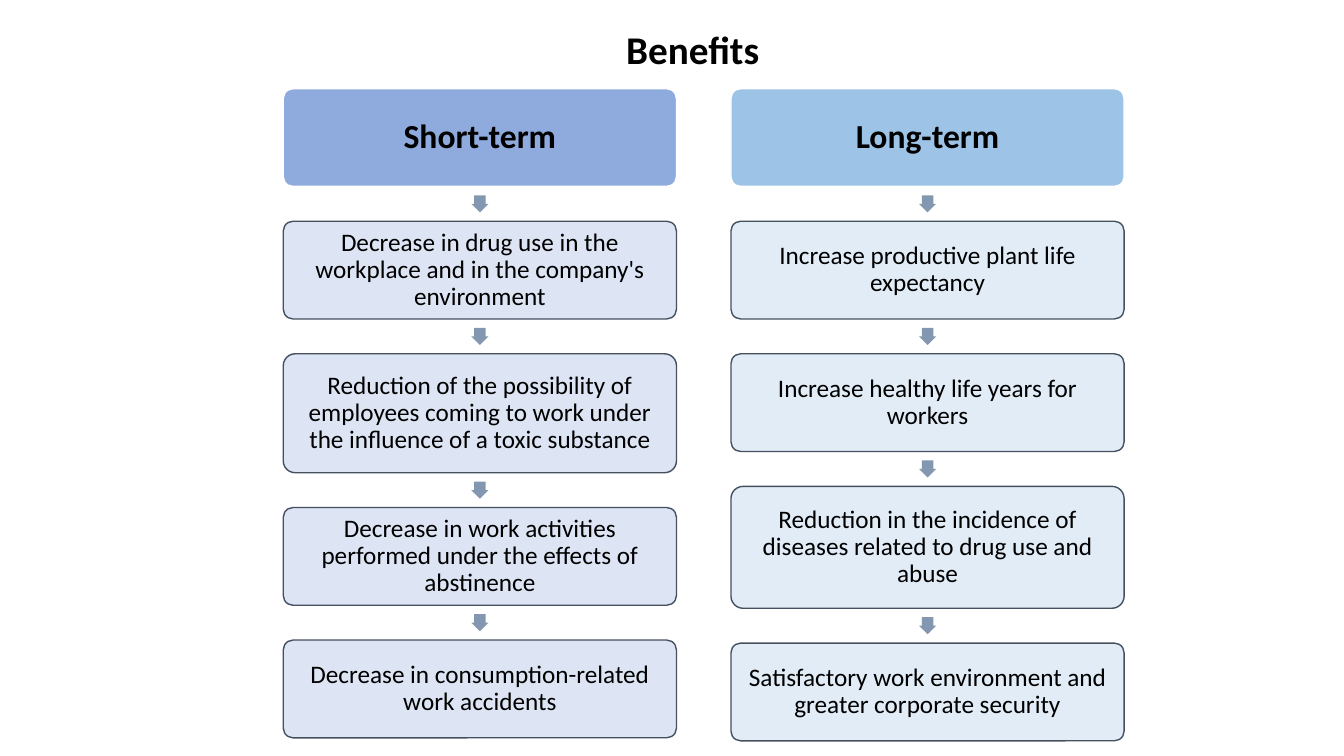
import pptx
import pptx.dml.color
import pptx.enum.shapes
import pptx.enum.text
import pptx.oxml
import pptx.oxml.ns
import pptx.util

Inches = pptx.util.Inches
Pt = pptx.util.Pt
PRESET = pptx.enum.shapes.MSO_SHAPE

BOX_WIDTH, BOX_HEIGHT = 3.9, 0.97
GAP = 0.345
ARROW_SIZE = 0.17
TOP = 0.88
LEFT, COLUMN_STEP = 2.81, 4.44
INSET = 0.03

# heading, heading fill, item fill, items as (text, height)
COLUMNS = [
    ("Short-term", "8FAADC", "DAE3F3", [
        ("Decrease in drug use in the workplace and in the company's environment", BOX_HEIGHT),
        ("Reduction of the possibility of employees coming to work under "
         "the influence of a toxic substance", 1.18),
        ("Decrease in work activities performed under the effects of abstinence", BOX_HEIGHT),
        ("Decrease in consumption-related work accidents", BOX_HEIGHT),
    ]),
    ("Long-term", "9DC3E6", "DEEBF7", [
        ("Increase productive plant life expectancy", BOX_HEIGHT),
        ("Increase healthy life years for workers", BOX_HEIGHT),
        ("Reduction in the incidence of diseases related to drug use and abuse", 1.21),
        ("Satisfactory work environment and greater corporate security", BOX_HEIGHT),
    ]),
]


def color(hex_string):
    return pptx.dml.color.RGBColor.from_string(hex_string)


def write(shape, text, size=18, bold=False, inset=INSET):
    frame = shape.text_frame
    frame.word_wrap = True
    frame.auto_size = pptx.enum.text.MSO_AUTO_SIZE.NONE
    frame.vertical_anchor = pptx.enum.text.MSO_ANCHOR.MIDDLE
    frame.margin_left = frame.margin_right = Inches(inset)
    frame.margin_top = frame.margin_bottom = Inches(inset)
    paragraph = frame.paragraphs[0]
    paragraph.alignment = pptx.enum.text.PP_ALIGN.CENTER
    paragraph.line_spacing = 0.9
    run = paragraph.add_run()
    run.text = text
    run.font.name = "Calibri"
    run.font.size = Pt(size)
    run.font.bold = bold
    run.font.color.rgb = color("000000")


def set_opacity(fill_format, percent):
    for rgb in fill_format._xPr.iter(pptx.oxml.ns.qn("a:srgbClr")):
        alpha = rgb.makeelement(pptx.oxml.ns.qn("a:alpha"), {"val": str(percent * 1000)})
        rgb.append(alpha)


def add_preset(slide, preset, left, top, width, height, fill):
    shape = slide.shapes.add_shape(
        preset, Inches(left), Inches(top), Inches(width), Inches(height))
    shape.shadow.inherit = False
    shape.fill.solid()
    shape.fill.fore_color.rgb = color(fill)
    shape.line.fill.background()
    return shape


def add_box(slide, left, top, height, fill, line):
    box = add_preset(slide, PRESET.ROUNDED_RECTANGLE, left, top, BOX_WIDTH, height, fill)
    box.adjustments[0] = 0.1
    box.line.color.rgb = color(line)
    box.line.width = Pt(1)
    return box


def add_arrow(slide, left, gap_top):
    """Centre a small downward arrow in the gap under a box."""
    arrow = add_preset(slide, PRESET.RIGHT_ARROW,
                       left + (BOX_WIDTH - ARROW_SIZE) / 2,
                       gap_top + (GAP - ARROW_SIZE) / 2,
                       ARROW_SIZE, ARROW_SIZE, "8497B0")
    arrow.rotation = 90
    arrow.adjustments[0] = 0.667
    arrow.adjustments[1] = 0.5


def add_column(slide, left, top, heading, heading_fill, item_fill, items):
    header = add_box(slide, left, top, BOX_HEIGHT, heading_fill, "FFFFFF")
    write(header, heading, size=24, bold=True)
    top += BOX_HEIGHT
    for text, height in items:
        add_arrow(slide, left, top)
        top += GAP
        box = add_box(slide, left, top, height, item_fill, "333F50")
        set_opacity(box.fill, 90)
        write(box, text)
        top += height


def add_title(slide, text, left, top, width, height):
    title = slide.shapes.title
    title.left, title.top = Inches(left), Inches(top)
    title.width, title.height = Inches(width), Inches(height)
    write(title, text, size=28, bold=True, inset=0.05)


def main():
    presentation = pptx.Presentation()
    presentation.slide_width = Inches(13.33)
    presentation.slide_height = Inches(7.5)
    slide = presentation.slides.add_slide(presentation.slide_layouts[5])
    add_title(slide, "Benefits", 4.88, 0.15, 3.98, 0.73)
    for index, column in enumerate(COLUMNS):
        add_column(slide, LEFT + index * COLUMN_STEP, TOP, *column)
    presentation.save("out.pptx")


if __name__ == "__main__":
    main()
